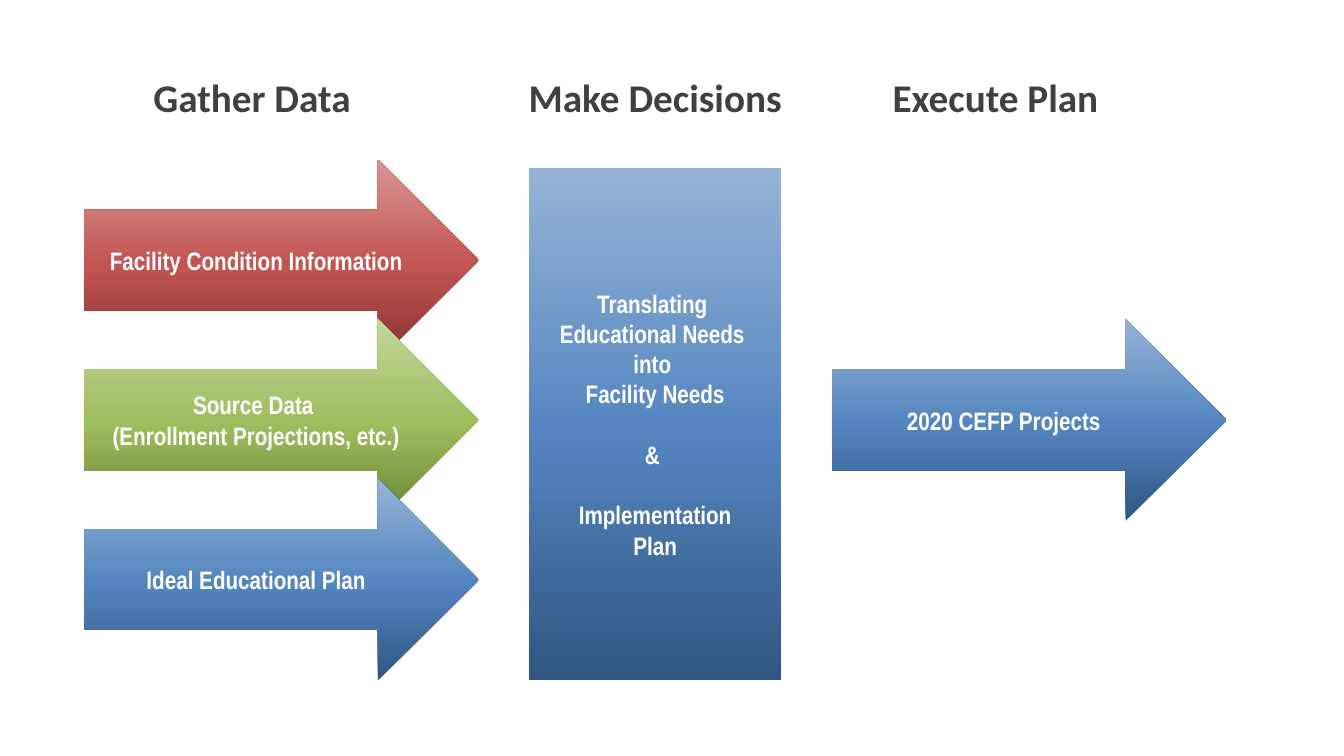
from copy import deepcopy
from dataclasses import dataclass

from pptx import Presentation
from pptx.dml.color import RGBColor
from pptx.enum.shapes import MSO_SHAPE as Preset
from pptx.enum.text import MSO_ANCHOR as Anchor, MSO_AUTO_SIZE as AutoSize, PP_ALIGN as Align
from pptx.slide import Slide
from pptx.text.text import TextFrame
from pptx.util import Pt

WHITE = RGBColor(0xFF, 0xFF, 0xFF)
CHARCOAL = RGBColor(0x40, 0x40, 0x40)
RED = (RGBColor(0x85, 0x31, 0x2F), RGBColor(0xC2, 0x55, 0x52), RGBColor(0xD9, 0x96, 0x94))
GREEN = (RGBColor(0x6A, 0x83, 0x36), RGBColor(0x9E, 0xBD, 0x5E), RGBColor(0xC3, 0xD6, 0x9B))
BLUE = (RGBColor(0x31, 0x56, 0x83), RGBColor(0x54, 0x85, 0xBF), RGBColor(0x95, 0xB3, 0xD7))
STOP_POSITIONS = (0, 0.48, 1)

HEADING_FONT = {"name": "Calibri", "size": Pt(28), "bold": True}
BLOCK_FONT = {"name": "Arial Narrow", "size": Pt(18), "bold": True}
BLANK_LINE = Pt(21.6)

GATHER_LEFT, DECIDE_LEFT, EXECUTE_LEFT = 60, 378, 594
ARROW_TOP, ARROW_WIDTH, ARROW_HEIGHT, ARROW_STEP = 114, 282, 144, 114
HEADING_TOP, HEADING_HEIGHT = 49, 41


@dataclass(frozen=True)
class Heading:
    text: str
    left: float
    width: float


@dataclass(frozen=True)
class Block:
    groups: tuple[tuple[str, ...], ...]
    colors: tuple[RGBColor, ...]
    left: float
    top: float
    width: float = ARROW_WIDTH
    height: float = ARROW_HEIGHT
    preset: Preset = Preset.RIGHT_ARROW


def arrow(lines: tuple[str, ...], colors: tuple[RGBColor, ...], left: float, row: int) -> Block:
    return Block((lines,), colors, left, ARROW_TOP + row * ARROW_STEP)


HEADINGS = (
    Heading("Gather Data", GATHER_LEFT, 240),
    Heading("Make Decisions", 327, 282),
    Heading("Execute Plan", EXECUTE_LEFT, 234),
)

BLOCKS = (
    arrow(("Facility Condition Information",), RED, GATHER_LEFT, 0),
    arrow(("Source Data ", "(Enrollment Projections, etc.)"), GREEN, GATHER_LEFT, 1),
    arrow(("Ideal Educational Plan",), BLUE, GATHER_LEFT, 2),
    Block(
        (
            ("Translating ", "Educational Needs ", "into ", "Facility Needs"),
            ("& ",),
            ("Implementation", "Plan"),
        ),
        BLUE, DECIDE_LEFT, 120, 180, 366, Preset.RECTANGLE,
    ),
    arrow(("2020 CEFP Projects",), BLUE, EXECUTE_LEFT, 1),
)


def write_groups(
    frame: TextFrame, groups: tuple[tuple[str, ...], ...], font: dict, color: RGBColor
) -> None:
    frame.word_wrap = True
    para = frame.paragraphs[0]
    for group_index, lines in enumerate(groups):
        for line_index, line in enumerate(lines):
            if group_index or line_index:
                para = frame.add_paragraph()
            if group_index and not line_index:
                para.space_before = BLANK_LINE
            para.alignment = Align.CENTER
            span = para.add_run()
            span.text = line
            for name, value in font.items():
                setattr(span.font, name, value)
            span.font.color.rgb = color


def draw_heading(page: Slide, heading: Heading) -> None:
    box = page.shapes.add_textbox(
        Pt(heading.left), Pt(HEADING_TOP), Pt(heading.width), Pt(HEADING_HEIGHT)
    )
    box.text_frame.auto_size = AutoSize.SHAPE_TO_FIT_TEXT
    write_groups(box.text_frame, ((heading.text,),), HEADING_FONT, CHARCOAL)


def draw_block(page: Slide, block: Block) -> None:
    shape = page.shapes.add_shape(
        block.preset, Pt(block.left), Pt(block.top), Pt(block.width), Pt(block.height)
    )
    shape.shadow.inherit = False
    shape.line.fill.background()
    shape.fill.gradient()
    shape.fill.gradient_angle = 90
    first_stop = shape._element.spPr.xpath("./a:gradFill/a:gsLst/a:gs")[0]
    first_stop.addnext(deepcopy(first_stop))
    for stop, position, color in zip(shape.fill.gradient_stops, STOP_POSITIONS, block.colors):
        stop.position = position
        stop.color.rgb = color
    shape.text_frame.vertical_anchor = Anchor.MIDDLE
    write_groups(shape.text_frame, block.groups, BLOCK_FONT, WHITE)


def main() -> None:
    deck = Presentation()
    deck.slide_width, deck.slide_height = Pt(960), Pt(540)
    page = deck.slides.add_slide(deck.slide_layouts[6])
    for block in BLOCKS:
        draw_block(page, block)
    for heading in HEADINGS:
        draw_heading(page, heading)
    deck.save("out.pptx")


if __name__ == "__main__":
    main()
